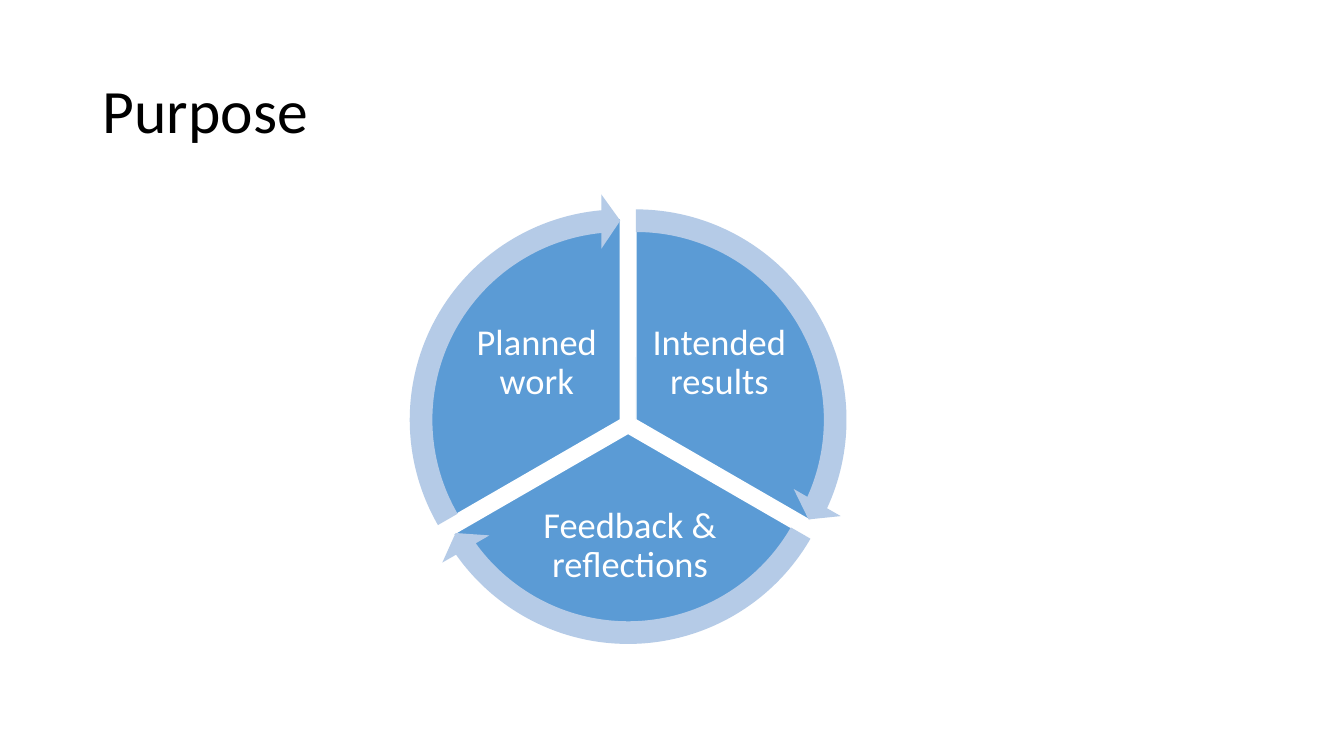
from dataclasses import dataclass
from math import cos, radians, sin

from pptx import Presentation
from pptx.dml.color import RGBColor as RGB
from pptx.enum.shapes import MSO_SHAPE as Shape
from pptx.enum.text import MSO_ANCHOR as Anchor, PP_ALIGN as Align
from pptx.util import Inches, Pt


@dataclass(frozen=True)
class Theme:
    font: str = "Calibri"
    title: int = 44
    label: int = 26
    ink: RGB = RGB(0x00, 0x00, 0x00)
    white: RGB = RGB(0xFF, 0xFF, 0xFF)
    slice: RGB = RGB(0x5B, 0x9B, 0xD5)
    arrow: RGB = RGB(0xB5, 0xCB, 0xE7)


HUB = (6.23, 4.21)
GAP = 0.09      # how far each sector is pushed out from the hub
DISC = 4.0
RING = 4.49
HEAD = 5.46     # degrees taken up by an arrow's head
TURN = 0.6      # adjustment units per degree

# label, label box, start and end angle in degrees clockwise from the right
SECTORS = [
    ("Intended results", (6.42, 3.01, 1.43, 1.19), 270, 30),
    ("Feedback & reflections", (5.18, 4.89, 2.14, 1.05), 30, 150),
    ("Planned work", (4.61, 3.01, 1.43, 1.19), 150, 270),
]


class Board:
    def __init__(self, slide, theme):
        self.slide = slide
        self.theme = theme

    def text(self, words, box, size, color, align, inset):
        frame = self.slide.shapes.add_textbox(*map(Inches, box)).text_frame
        frame.word_wrap = True
        frame.vertical_anchor = Anchor.MIDDLE
        frame.margin_left = frame.margin_right = Inches(inset)
        frame.margin_top = frame.margin_bottom = Inches(0.04)
        para = frame.paragraphs[0]
        para.alignment = align
        para.line_spacing = 0.9
        run = para.add_run()
        run.text = words
        run.font.name = self.theme.font
        run.font.size = Pt(size)
        run.font.color.rgb = color

    def round(self, kind, start, size, fill, values):
        """Add a round shape, moved off the hub along its sector's middle."""
        mid = radians(start + 60)
        left = HUB[0] + GAP * cos(mid) - size / 2
        top = HUB[1] + GAP * sin(mid) - size / 2
        shape = self.slide.shapes.add_shape(
            kind, Inches(left), Inches(top), Inches(size), Inches(size))
        shape.shadow.inherit = False
        shape.fill.solid()
        shape.fill.fore_color.rgb = fill
        shape.line.fill.background()
        for i, value in enumerate(values):
            shape.adjustments[i] = value
        return shape

    def pie(self, start, end):
        shape = self.round(Shape.PIE, start, DISC, self.theme.slice,
                           (start * TURN, end * TURN))
        shape.line.color.rgb = self.theme.white
        shape.line.width = Pt(1)

    def arrow(self, start, end):
        self.round(Shape.CIRCULAR_ARROW, start, RING, self.theme.arrow,
                   (0.05, HEAD * TURN, (end - HEAD) * TURN,
                    start * TURN, 0.06))


def main():
    deck = Presentation()
    deck.slide_width = Inches(13.33)
    deck.slide_height = Inches(7.5)
    theme = Theme()
    board = Board(deck.slides.add_slide(deck.slide_layouts[6]), theme)

    board.text("Purpose", (0.92, 0.4, 11.5, 1.45), theme.title, theme.ink,
               Align.LEFT, 0.1)
    for words, box, start, end in SECTORS:
        board.pie(start, end)
        board.text(words, box, theme.label, theme.white, Align.CENTER, 0.04)
    for _, _, start, end in SECTORS:
        board.arrow(start, end)

    deck.save("out.pptx")


if __name__ == "__main__":
    main()
